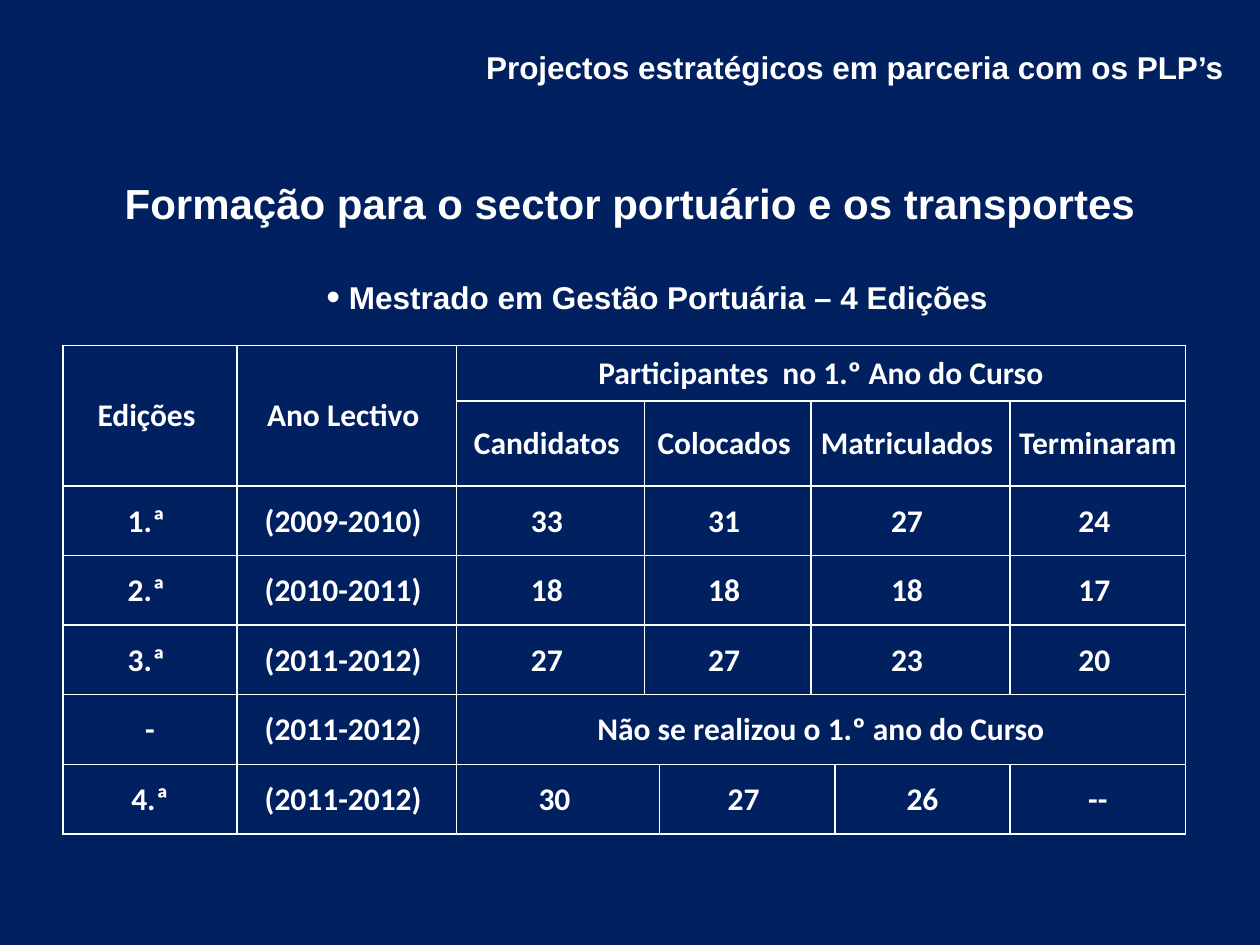
from dataclasses import dataclass

from lxml.etree import SubElement
from pptx import Presentation
from pptx.dml.color import RGBColor
from pptx.enum.text import MSO_ANCHOR as Anchor, MSO_AUTO_SIZE as AutoSize, PP_ALIGN as Align
from pptx.oxml.ns import qn
from pptx.util import Inches, Pt


@dataclass(frozen=True)
class Theme:
    background: RGBColor = RGBColor(0x00, 0x20, 0x60)
    ink: RGBColor = RGBColor(0xFF, 0xFF, 0xFF)
    text_font: str = "Arial"
    table_font: str = "Calibri"
    title_size: Pt = Pt(24)
    body_size: Pt = Pt(18)
    border: Pt = Pt(1)


THEME = Theme()
SLIDE_WIDTH, SLIDE_HEIGHT = Inches(10), Inches(7.5)
GRID_COLUMNS, GRID_ROWS = 100, 75

HEADER_BOX = (35.7, 3.3, 64.3, 4)
TITLE_BOX = (0, 14.5, 100, 4)
COURSE_BOX = (4.9, 21.6, 89.5, 6.1)
TABLE_BOX = (5, 27.4, 89.1, 38.8)

COLUMN_SHARES = (1.38, 1.74, 1.49, 0.12, 1.2, 0.19, 1.39, 1.39)
ROW_SHARES = (0.44, 0.67) + (0.55,) * 5

REGULAR_SPANS = (1, 1, 1, 2, 2, 1)
NOTE_SPANS = (1, 1, 6)
LAST_SPANS = (1, 1, 2, 2, 1, 1)
TABLE_ROWS = (
    (NOTE_SPANS, ("Edições ", "Ano Lectivo ", "Participantes  no 1.º Ano do Curso")),
    (REGULAR_SPANS, ("", "", "Candidatos ", "Colocados ", "Matriculados ", "Terminaram ")),
    (REGULAR_SPANS, ("1.ª ", "(2009-2010) ", "33 ", "31 ", "27 ", "24 ")),
    (REGULAR_SPANS, ("2.ª ", "(2010-2011) ", "18 ", "18 ", "18 ", "17 ")),
    (REGULAR_SPANS, ("3.ª ", "(2011-2012) ", "27 ", "27 ", "23 ", "20 ")),
    (NOTE_SPANS, ("-", "(2011-2012) ", "Não se realizou o 1.º ano do Curso")),
    (LAST_SPANS, ("4.ª", "(2011-2012) ", "30 ", "27 ", "26", "--")),
)


def place(box):
    left, top, width, height = box
    column, row = SLIDE_WIDTH / GRID_COLUMNS, SLIDE_HEIGHT / GRID_ROWS
    return int(left * column), int(top * row), int(width * column), int(height * row)


def write(paragraph, text, font_name, size):
    paragraph.alignment = Align.CENTER
    run = paragraph.add_run()
    run.text = text
    font = run.font
    font.name, font.size, font.bold = font_name, size, True
    font.color.rgb = THEME.ink


def add_bullet(paragraph):
    paragraph.level = 1
    properties = paragraph._p.get_or_add_pPr()
    properties.set("marL", str(Inches(0.5)))
    properties.set("indent", "0")
    SubElement(properties, qn("a:buSzPct"), val="125000")
    SubElement(properties, qn("a:buFont"), typeface=THEME.text_font)
    SubElement(properties, qn("a:buChar"), char="•")


def add_line(slide, box, text, bulleted=False):
    frame = slide.shapes.add_textbox(*place(box)).text_frame
    frame.word_wrap = True
    frame.auto_size = AutoSize.SHAPE_TO_FIT_TEXT
    paragraph = frame.paragraphs[0]
    if bulleted:
        add_bullet(paragraph)
    write(paragraph, text, THEME.text_font, THEME.body_size)


def set_title(slide, box, text):
    title = slide.shapes.title
    title.left, title.top, title.width, title.height = place(box)
    frame = title.text_frame
    frame.word_wrap = True
    frame.auto_size = AutoSize.SHAPE_TO_FIT_TEXT
    frame.vertical_anchor = Anchor.TOP
    paragraph = frame.paragraphs[0]
    paragraph.line_spacing = 0.75
    write(paragraph, text, THEME.text_font, THEME.title_size)


def format_cell(cell):
    cell.vertical_anchor = Anchor.MIDDLE
    cell.margin_left = cell.margin_right = Inches(0.07)
    cell.margin_top, cell.margin_bottom = Inches(0.01), 0
    properties = cell._tc.get_or_add_tcPr()
    for side in ("a:lnL", "a:lnR", "a:lnT", "a:lnB"):
        line = SubElement(properties, qn(side), w=str(THEME.border))
        fill = SubElement(line, qn("a:solidFill"))
        SubElement(fill, qn("a:srgbClr"), val=str(THEME.ink))
    cell.fill.background()


def add_editions_table(slide, box):
    left, top, width, height = place(box)
    table = slide.shapes.add_table(
        len(ROW_SHARES), len(COLUMN_SHARES), left, top, width, height
    ).table
    table.first_row = table.horz_banding = False
    for column, share in zip(table.columns, COLUMN_SHARES):
        column.width = int(width * share / sum(COLUMN_SHARES))
    for row, share in zip(table.rows, ROW_SHARES):
        row.height = int(height * share / sum(ROW_SHARES))
    for cell in table.iter_cells():
        format_cell(cell)
    for column in range(2):
        table.cell(0, column).merge(table.cell(1, column))
    for row, (spans, texts) in enumerate(TABLE_ROWS):
        column = 0
        for span, text in zip(spans, texts):
            cell = table.cell(row, column)
            if span > 1:
                cell.merge(table.cell(row, column + span - 1))
            if text:
                write(cell.text_frame.paragraphs[0], text, THEME.table_font, THEME.body_size)
            column += span


def main():
    presentation = Presentation()
    presentation.slide_width, presentation.slide_height = SLIDE_WIDTH, SLIDE_HEIGHT
    slide = presentation.slides.add_slide(presentation.slide_layouts.get_by_name("Title Only"))
    background = slide.background.fill
    background.solid()
    background.fore_color.rgb = THEME.background
    add_line(slide, COURSE_BOX, " Mestrado em Gestão Portuária – 4 Edições", bulleted=True)
    set_title(slide, TITLE_BOX, "Formação para o sector portuário e os transportes")
    add_editions_table(slide, TABLE_BOX)
    add_line(slide, HEADER_BOX, "Projectos estratégicos em parceria com os PLP’s")
    presentation.save("out.pptx")


if __name__ == "__main__":
    main()
